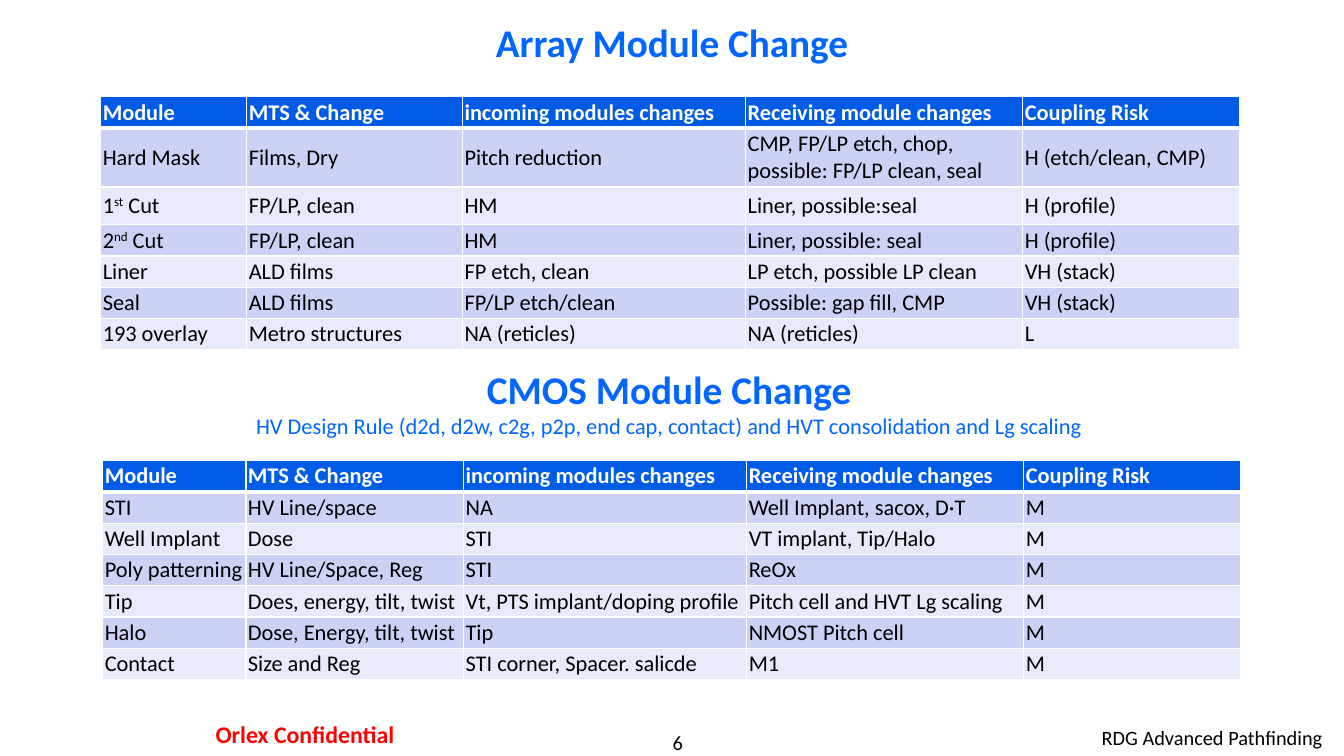
from dataclasses import dataclass

from lxml.etree import SubElement
from pptx import Presentation
from pptx.dml.color import RGBColor
from pptx.enum.text import MSO_ANCHOR as Anchor, PP_ALIGN as Align
from pptx.oxml.ns import qn
from pptx.util import Emu, Inches, Pt

FONT = "Calibri"
WHITE = RGBColor(0xFF, 0xFF, 0xFF)
BLACK = RGBColor(0x00, 0x00, 0x00)
RED = RGBColor(0xFF, 0x00, 0x00)
TITLE_BLUE = RGBColor(0x00, 0x66, 0xFF)
HEADER_BLUE = RGBColor(0x00, 0x5C, 0xE7)
BANDS = (RGBColor(0xE7, 0xEA, 0xFA), RGBColor(0xCC, 0xD2, 0xF6))

CELL_INSET = Inches(0.02)
ROW = 4.14  # height of a one-line row, in percent of the slide height
HEADER = ("Module", "MTS & Change", "incoming modules changes",
          "Receiving module changes", "Coupling Risk")


@dataclass(frozen=True)
class Line:
    text: str
    size: float
    color: RGBColor
    bold: bool = False


@dataclass(frozen=True)
class Label:
    """A text box; place is left, top, width, height in percent of the slide."""
    place: tuple[float, float, float, float]
    lines: tuple[Line, ...]
    align: Align = Align.CENTER
    anchor: Anchor = Anchor.TOP
    inset_x: float = 0.1
    inset_y: float = 0.05


@dataclass(frozen=True)
class ModuleTable:
    """Left, top, column widths and row heights are percent of the slide."""
    left: float
    top: float
    widths: tuple[float, ...]
    heights: tuple[float, ...]
    rows: tuple[tuple[str, ...], ...]


LABELS = (
    Label((41.7, 96.53, 17.48, 3.2), (Line("6", 14.5, BLACK),), inset_x=0, inset_y=0),
    Label((66.2, 95.33, 32.93, 4.67), (Line("RDG Advanced Pathfinding", 14.5, BLACK),),
          align=Align.RIGHT),
    Label((11.63, 94.4, 22.13, 5.47), (Line("Orlex Confidential", 17, RED, True),),
          inset_x=0.12, inset_y=0.06),
    Label((7.5, 2.27, 85, 6.4), (Line("Array Module Change", 28, TITLE_BLUE, True),),
          anchor=Anchor.MIDDLE),
    Label((7.28, 47.5, 85, 11.3),
          (Line("CMOS Module Change", 28, TITLE_BLUE, True),
           Line("HV Design Rule (d2d, d2w, c2g, p2p, end cap, contact) "
                "and HVT consolidation and Lg scaling", 16, TITLE_BLUE)),
          anchor=Anchor.MIDDLE),
)

# A part between two ^ marks is superscript.
TABLES = (
    ModuleTable(7.5, 12.8, (10.87, 16.05, 21.07, 20.62, 16.12),
                (ROW, 7.8, 5, ROW, ROW, ROW, ROW), (
        HEADER,
        ("Hard Mask", "Films, Dry", "Pitch reduction",
         "CMP, FP/LP etch, chop, possible: FP/LP clean, seal", "H (etch/clean, CMP)"),
        ("1^st^ Cut", "FP/LP, clean", "HM", "Liner, possible:seal", "H (profile)"),
        ("2^nd^ Cut", "FP/LP, clean", "HM", "Liner, possible: seal", "H (profile)"),
        ("Liner", "ALD films", "FP etch, clean", "LP etch, possible LP clean", "VH (stack)"),
        ("Seal", "ALD films", "FP/LP etch/clean", "Possible: gap fill, CMP", "VH (stack)"),
        ("193 overlay", "Metro structures", "NA (reticles)", "NA (reticles)", "L"),
    )),
    ModuleTable(7.65, 60.93, (10.65, 16.2, 21.07, 20.62, 16.12), (ROW,) * 7, (
        HEADER,
        ("STI", "HV Line/space", "NA", "Well Implant, sacox, D·T", "M"),
        ("Well Implant", "Dose", "STI", "VT implant, Tip/Halo", "M"),
        ("Poly patterning", "HV Line/Space, Reg", "STI", "ReOx", "M"),
        ("Tip", "Does, energy, tilt, twist", "Vt, PTS implant/doping profile",
         "Pitch cell and HVT Lg scaling", "M"),
        ("Halo", "Dose, Energy, tilt, twist", "Tip", "NMOST Pitch cell", "M"),
        ("Contact", "Size and Reg", "STI corner, Spacer. salicde", "M1", "M"),
    )),
)

prs = Presentation()
prs.slide_width, prs.slide_height = Inches(13.33), Inches(7.5)


def across(percent: float) -> Emu:
    return Emu(round(prs.slide_width * percent / 100))


def down(percent: float) -> Emu:
    return Emu(round(prs.slide_height * percent / 100))


def style_font(font, size: float, color: RGBColor, bold: bool) -> None:
    font.name, font.size, font.bold = FONT, Pt(size), bold
    font.color.rgb = color


def draw_label(s, label: Label) -> None:
    left, top, width, height = label.place
    sp = s.shapes.add_textbox(across(left), down(top), across(width), down(height))
    tf = sp.text_frame
    tf.word_wrap = True
    tf.vertical_anchor = label.anchor
    tf.margin_left = tf.margin_right = Inches(label.inset_x)
    tf.margin_top = tf.margin_bottom = Inches(label.inset_y)
    tf.text = "\n".join(line.text for line in label.lines)
    for p, line in zip(tf.paragraphs, label.lines):
        p.alignment = label.align
        style_font(p.runs[0].font, line.size, line.color, line.bold)


def add_borders(cell, row: int) -> None:
    """White 1 pt edges, with a 3 pt rule under the header row."""
    widths = {"a:lnL": 1, "a:lnR": 1, "a:lnT": 3 if row == 1 else 1,
              "a:lnB": 3 if row == 0 else 1}
    tc_pr = cell._tc.get_or_add_tcPr()
    for tag, width in widths.items():
        ln = SubElement(tc_pr, qn(tag), w=str(Pt(width)))
        fill = SubElement(ln, qn("a:solidFill"))
        SubElement(fill, qn("a:srgbClr"), val=str(WHITE))


def fill_cell(cell, text: str, row: int) -> None:
    is_header = row == 0
    add_borders(cell, row)
    cell.fill.solid()
    cell.fill.fore_color.rgb = HEADER_BLUE if is_header else BANDS[row % 2]
    cell.vertical_anchor = Anchor.MIDDLE
    cell.margin_left = cell.margin_right = CELL_INSET
    cell.margin_top = cell.margin_bottom = CELL_INSET
    p = cell.text_frame.paragraphs[0]
    for i, part in enumerate(text.split("^")):
        r = p.add_run()
        r.text = part
        style_font(r.font, 16, WHITE if is_header else BLACK, is_header)
        if i % 2:
            r._r.get_or_add_rPr().set("baseline", "30000")


def draw_table(s, spot: ModuleTable) -> None:
    table = s.shapes.add_table(
        len(spot.rows), len(spot.widths), across(spot.left), down(spot.top),
        across(sum(spot.widths)), down(sum(spot.heights))).table
    for column, width in zip(table.columns, spot.widths):
        column.width = across(width)
    for i, (height, texts) in enumerate(zip(spot.heights, spot.rows)):
        table.rows[i].height = down(height)
        for j, text in enumerate(texts):
            fill_cell(table.cell(i, j), text, i)


def main() -> None:
    s = prs.slides.add_slide(prs.slide_layouts[6])
    for label in LABELS:
        draw_label(s, label)
    for table in TABLES:
        draw_table(s, table)
    prs.save("out.pptx")


if __name__ == "__main__":
    main()
